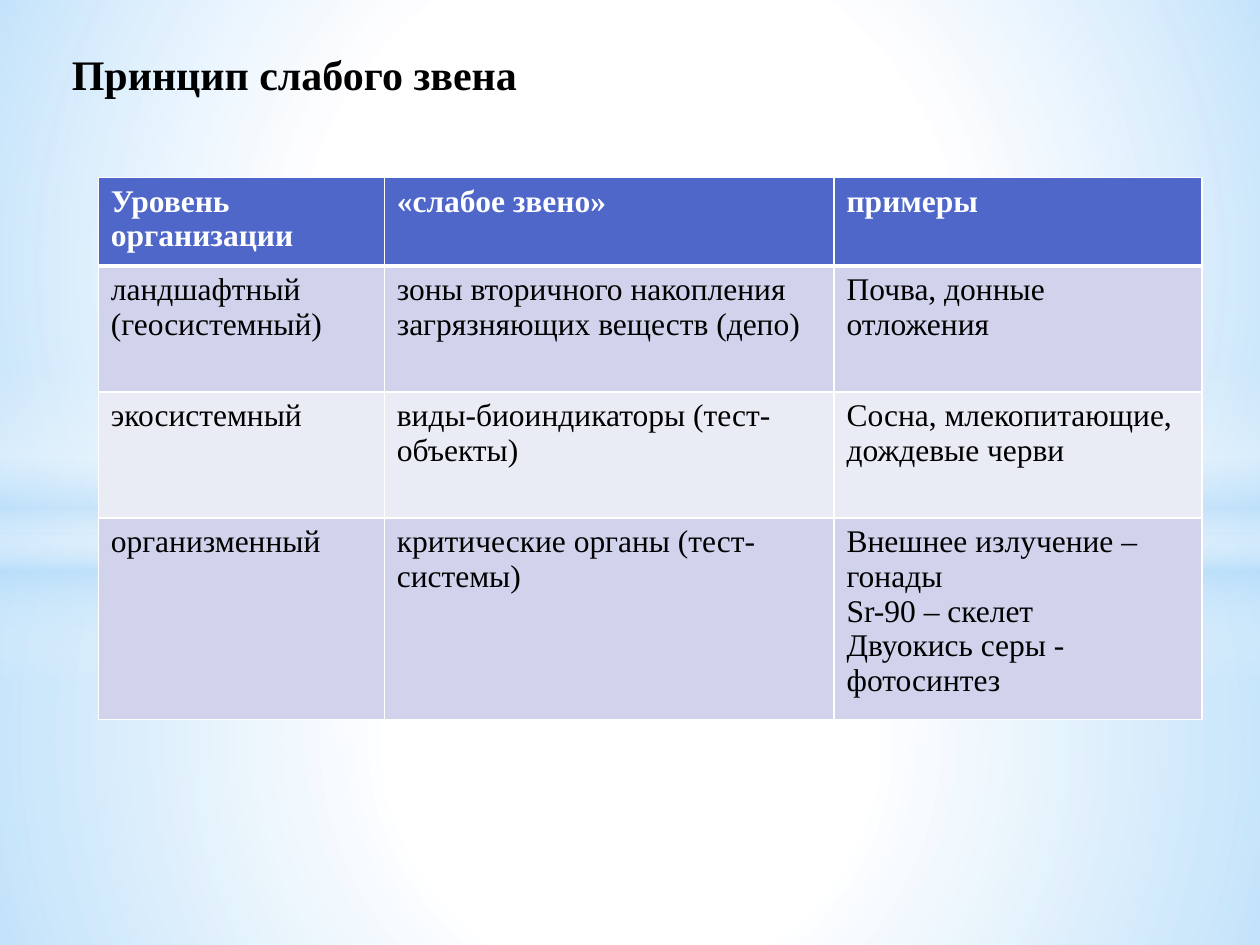
from lxml import etree
from pptx import Presentation
from pptx import oxml
from pptx import util as u
from pptx.dml.color import RGBColor
from pptx.enum import shapes, text
from pptx.oxml.ns import nsdecls, qn

COLORS = {"white": "FFFFFF", "sky": "B4DCFA", "head": "4E67C8",
          "odd": "D0D3EB", "even": "E9EBF5", "ink": "000000"}
FONT = "Times New Roman"
RADIAL = ('<a:path path="circle"><a:fillToRect l="50000" t="50000" '
          'r="50000" b="50000"/></a:path>')
LINEAR = '<a:lin ang="5400000" scaled="0"/>'


def add_glow(kind, box, direction, stops):
    """Add a borderless shape with a gradient of (position, colour, opacity)."""
    sp = s.shapes.add_shape(kind, *[u.Inches(v) for v in box])
    sp.shadow.inherit = False
    sp.line.fill.background()
    sp.fill.background()
    gs = "".join(
        f'<a:gs pos="{pos * 1000}"><a:srgbClr val="{COLORS[name]}">'
        f'<a:alpha val="{alpha * 1000}"/></a:srgbClr></a:gs>'
        for pos, name, alpha in stops)
    grad = oxml.parse_xml(f'<a:gradFill {nsdecls("a")} rotWithShape="1">'
                          f'<a:gsLst>{gs}</a:gsLst>{direction}</a:gradFill>')
    spPr = sp._element.spPr
    spPr.replace(spPr.find(qn("a:noFill")), grad)


def add_run(p, words, size, color, bold):
    r = p.add_run()
    r.text = words
    r.font.name = FONT
    r.font.size = u.Pt(size)
    r.font.bold = bold
    r.font.color.rgb = RGBColor.from_string(COLORS[color])


prs = Presentation()
prs.slide_width, prs.slide_height = u.Inches(10), u.Inches(7.5)
s = prs.slides.add_slide(prs.slide_layouts[5])

# Background glow
RECT, OVAL = shapes.MSO_SHAPE.RECTANGLE, shapes.MSO_SHAPE.OVAL
add_glow(RECT, (0, 4.23, 10, 3.27), RADIAL,
         [(0, "white", 91), (37, "white", 76), (100, "sky", 79)])
add_glow(RECT, (0, 0, 10, 4.23), RADIAL,
         [(0, "white", 89), (48, "white", 62), (100, "sky", 79)])
add_glow(RECT, (0, 2.9, 10, 2.5), LINEAR,
         [(0, "white", 0), (29, "white", 30), (45, "sky", 40),
          (55, "white", 26), (65, "sky", 60), (100, "white", 0)])
add_glow(OVAL, (0, 1.75, 10, 5.58), RADIAL,
         [(0, "white", 100), (54, "white", 0)])

# Table of weak links
rows = [
    ["Уровень организации", "«слабое звено»", "примеры"],
    ["ландшафтный (геосистемный)",
     "зоны вторичного накопления загрязняющих веществ (депо)",
     "Почва, донные отложения"],
    ["экосистемный", "виды-биоиндикаторы (тест-объекты)",
     "Сосна, млекопитающие, дождевые черви"],
    ["организменный", "критические органы (тест-системы)",
     "Внешнее излучение – гонады\nSr-90 – скелет\nДвуокись серы - фотосинтез"],
]
widths, heights = [2.27, 3.57, 2.92], [0.7, 1, 1, 1.6]
table = s.shapes.add_table(len(rows), len(widths), u.Inches(0.78), u.Inches(1.41),
                           u.Inches(sum(widths)), u.Inches(sum(heights))).table
for col, width in zip(table.columns, widths):
    col.width = u.Inches(width)
for row, height in zip(table.rows, heights):
    row.height = u.Inches(height)

for i, row in enumerate(rows):
    header = i == 0
    fill = "head" if header else "odd" if i % 2 else "even"
    for j, words in enumerate(row):
        cell = table.cell(i, j)
        cell.fill.solid()
        cell.fill.fore_color.rgb = RGBColor.from_string(COLORS[fill])
        for n, line in enumerate(words.split("\n")):
            tf = cell.text_frame
            p = tf.add_paragraph() if n else tf.paragraphs[0]
            add_run(p, line, 18, "white" if header else "ink", header)
        # White borders, thicker between the header and the body
        tcPr = cell._tc.get_or_add_tcPr()
        for k, side in enumerate(("lnL", "lnR", "lnT", "lnB")):
            thick = (i, side) in ((0, "lnB"), (1, "lnT"))
            ln = etree.Element(qn(f"a:{side}"), w=str(u.Pt(3 if thick else 1)))
            solid = etree.SubElement(ln, qn("a:solidFill"))
            etree.SubElement(solid, qn("a:srgbClr"), val=COLORS["white"])
            tcPr.insert(k, ln)

# Title, in front of the glow
title = s.shapes.title
title.left, title.top = u.Inches(0.47), u.Inches(0)
title.width, title.height = u.Inches(9.38), u.Inches(1.17)
title._element.getparent().append(title._element)
tf = title.text_frame
tf.word_wrap = True
tf.vertical_anchor = text.MSO_ANCHOR.MIDDLE
p = tf.paragraphs[0]
p.alignment = text.PP_ALIGN.LEFT
add_run(p, "Принцип слабого звена", 24, "ink", True)

prs.save("out.pptx")
